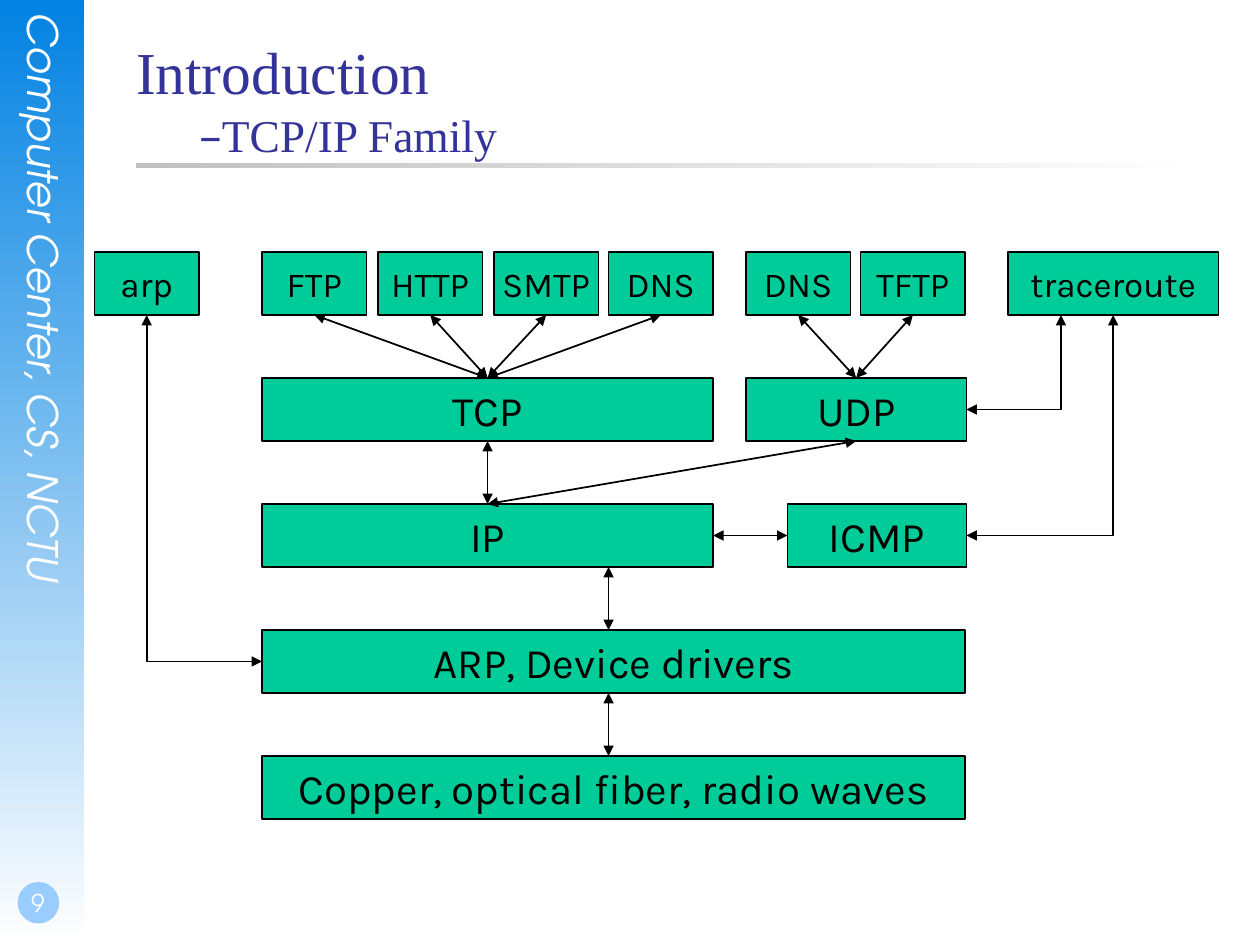
from dataclasses import dataclass

from pptx import Presentation
from pptx.dml.color import RGBColor
from pptx.enum import shapes, text
from pptx.oxml import ns, xmlchemy
from pptx.util import Inches, Pt

TOP, LEFT, BOTTOM, RIGHT = range(4)  # connection sites of a rectangle


@dataclass(frozen=True)
class Theme:
    blue: str = "0282E2"
    sky: str = "99CCFF"
    navy: str = "333399"
    green: str = "00CC99"
    grey: str = "C0C0C0"
    white: str = "FFFFFF"
    black: str = "000000"
    serif: str = "Times New Roman"
    dash: str = "DejaVu Sans"
    side: str = "TeX Gyre Adventor"
    body: str = "Karla"
    head: int = 34
    sub: int = 26
    large: int = 24
    small: int = 20
    page: int = 14


T = Theme()


def rgb(code):
    return RGBColor.from_string(code)


def spot(x, y, w, h):
    return [Inches(v) for v in (x, y, w, h)]


def add_run(para, words, size, font, color, italic=None):
    run = para.add_run()
    run.text = words
    run.font.size = Pt(size)
    run.font.name = font
    run.font.color.rgb = rgb(color)
    run.font.italic = italic


def set_frame(frame, anchor, wrap=True, pad=(0, 0, 0, 0)):
    frame.word_wrap = wrap
    frame.vertical_anchor = anchor
    (frame.margin_left, frame.margin_top,
     frame.margin_right, frame.margin_bottom) = [Inches(v) for v in pad]


def add_form(slide, kind, place, fill):
    form = slide.shapes.add_shape(kind, *spot(*place))
    form.shadow.inherit = False
    form.fill.solid()
    form.fill.fore_color.rgb = rgb(fill)
    form.line.fill.background()
    return form


def add_fade(slide, place, start, angle):
    """Add a bar that fades from the start colour to white."""
    bar = add_form(slide, shapes.MSO_SHAPE.RECTANGLE, place, start)
    bar.fill.gradient()
    bar.fill.gradient_angle = angle
    for stop, color in zip(bar.fill.gradient_stops, (start, T.white)):
        stop.color.rgb = rgb(color)


def add_side(slide):
    add_fade(slide, (0, 0, 0.67, 7.5), T.blue, 270)
    label = slide.shapes.add_textbox(*spot(0.15, 0.1, 0.4, 5.11)).text_frame
    set_frame(label, text.MSO_ANCHOR.TOP)
    label._txBody.bodyPr.set("vert", "eaVert")
    add_run(label.paragraphs[0], "Computer Center, CS, NCTU",
            T.large, T.side, T.white, True)

    add_form(slide, shapes.MSO_SHAPE.OVAL, (0.14, 7, 0.33, 0.33), T.sky)
    page = slide.shapes.add_textbox(*spot(0, 6.83, 0.58, 0.5)).text_frame
    set_frame(page, text.MSO_ANCHOR.BOTTOM, pad=(0.02, 0, 0, 0.05))
    page.paragraphs[0].alignment = text.PP_ALIGN.CENTER
    add_run(page.paragraphs[0], "9", T.page, T.side, T.white)


def add_title(slide):
    add_fade(slide, (1.08, 1.29, 8.5, 0.04), T.grey, 0)
    title = slide.shapes.title
    title.left, title.top, title.width, title.height = spot(1.08, 0.28, 8.5, 1.25)
    set_frame(title.text_frame, text.MSO_ANCHOR.TOP)
    title.text_frame.auto_size = text.MSO_AUTO_SIZE.NONE
    para = title.text_frame.paragraphs[0]
    para.alignment = text.PP_ALIGN.LEFT
    add_run(para, "Introduction", T.head, T.serif, T.navy)
    para.add_line_break()
    add_run(para, "\t", T.sub, T.serif, T.navy)
    add_run(para, "–", T.sub, T.dash, T.navy)
    add_run(para, "TCP/IP Family", T.sub, T.serif, T.navy)


def add_box(slide, words, x, y, width, size):
    box = add_form(slide, shapes.MSO_SHAPE.RECTANGLE, (x, y, width, 0.5), T.green)
    box.line.color.rgb = rgb(T.black)
    box.line.width = Pt(0.75)
    set_frame(box.text_frame, text.MSO_ANCHOR.MIDDLE, False, (0.1, 0.05, 0.1, 0.05))
    box.text_frame.paragraphs[0].alignment = text.PP_ALIGN.CENTER
    add_run(box.text_frame.paragraphs[0], words, size, T.body, T.black)
    return box


def add_arrow(slide, start=(0, 0), end=(0, 0), ends=("head", "tail"), bent=False):
    kind = shapes.MSO_CONNECTOR.ELBOW if bent else shapes.MSO_CONNECTOR.STRAIGHT
    arrow = slide.shapes.add_connector(kind, *[Inches(v) for v in (*start, *end)])
    arrow.line.color.rgb = rgb(T.black)
    arrow.line.width = Pt(1)
    props = arrow.element.spPr
    if bent:
        props.find(ns.qn("a:prstGeom")).set("prst", "bentConnector2")
    for side in ends:
        tip = xmlchemy.OxmlElement(f"a:{side}End")
        tip.set("type", "triangle")
        props.find(ns.qn("a:ln")).append(tip)
    props.append(xmlchemy.OxmlElement("a:effectLst"))
    return arrow


def link(slide, first, out, second, into, bent=False):
    """Join two boxes at the given connection sites."""
    arrow = add_arrow(slide, bent=bent)
    arrow.begin_connect(first, out)
    arrow.end_connect(second, into)


def add_stack(slide):
    tools = [add_box(slide, name, x, 2, width, T.small) for name, x, width in (
        ("arp", 0.75, 0.83), ("FTP", 2.08, 0.83), ("HTTP", 3, 0.83),
        ("SMTP", 3.92, 0.83), ("DNS", 4.83, 0.83), ("DNS", 5.92, 0.83),
        ("TFTP", 6.83, 0.83), ("traceroute", 8, 1.67))]
    tcp, udp, ip, icmp, drivers, _ = [
        add_box(slide, name, x, y, width, T.large) for name, x, y, width in (
            ("TCP", 2.08, 3, 3.58), ("UDP", 5.92, 3, 1.75),
            ("IP", 2.08, 4, 3.58), ("ICMP", 6.25, 4, 1.42),
            ("ARP, Device drivers", 2.08, 5, 5.58),
            ("Copper, optical fiber, radio waves", 2.08, 6, 5.58))]
    arp, trace = tools[0], tools[-1]

    for host, users in ((tcp, tools[1:5]), (udp, tools[5:7]), (ip, (tcp, udp))):
        for user in users:
            link(slide, host, TOP, user, BOTTOM)
    link(slide, ip, RIGHT, icmp, LEFT)
    link(slide, icmp, RIGHT, trace, BOTTOM, bent=True)
    link(slide, drivers, LEFT, arp, BOTTOM, bent=True)

    corner = (8.42, 3.25)
    add_arrow(slide, (8.42, 2.5), corner, ["head"])
    add_arrow(slide, corner, (7.67, 3.25), ["tail"])
    for y in (5, 6):
        add_arrow(slide, (4.83, y), (4.83, y - 0.5))


def main():
    deck = Presentation()
    deck.slide_width, deck.slide_height = Inches(10), Inches(7.5)
    slide = deck.slides.add_slide(deck.slide_layouts[5])
    add_side(slide)
    add_title(slide)
    add_stack(slide)
    deck.save("out.pptx")


if __name__ == "__main__":
    main()
